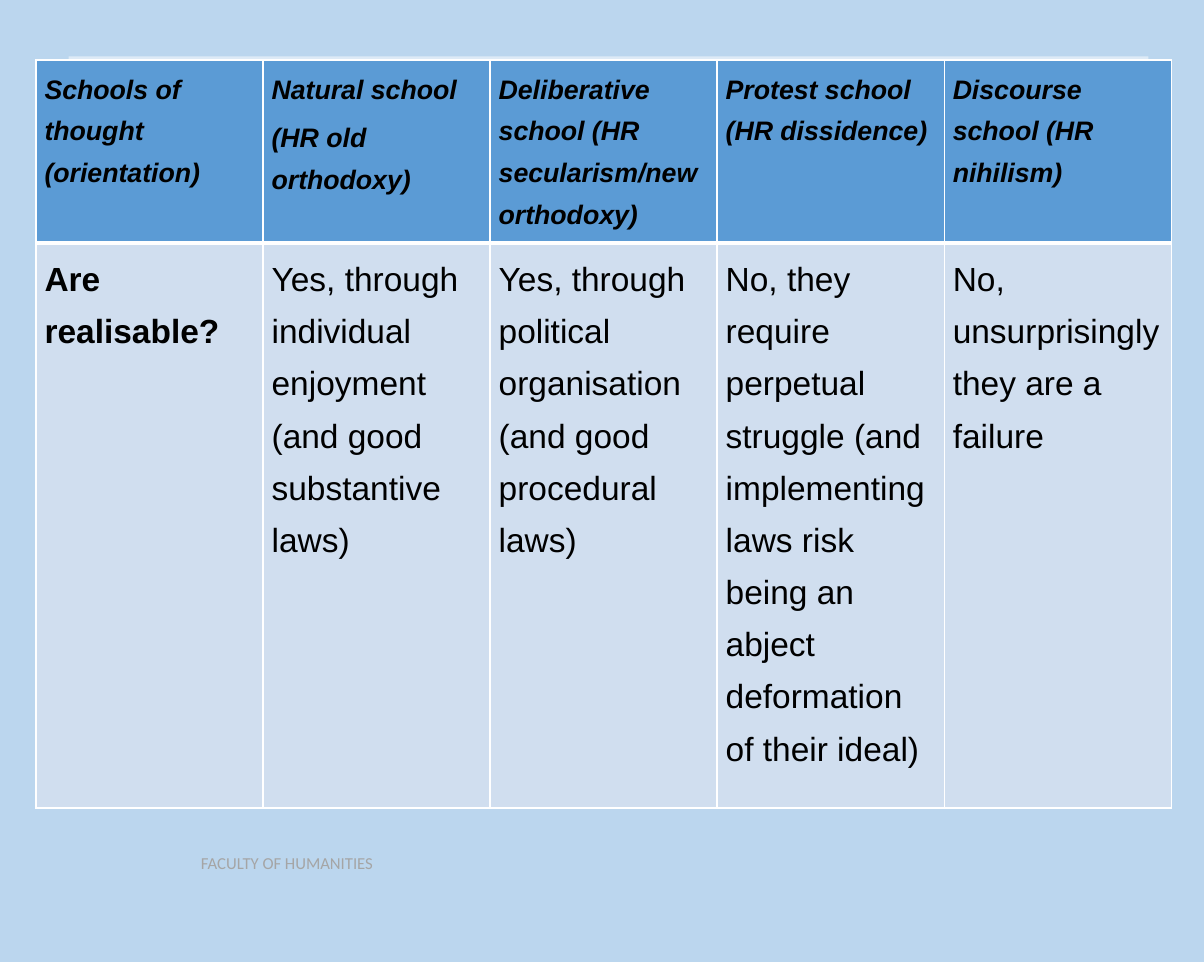
"""Build a slide comparing schools of thought on whether human rights are realisable."""
from pptx import Presentation
from pptx.dml.color import RGBColor
from pptx.enum import shapes, text
from pptx.oxml import parse_xml
from pptx.oxml.ns import nsdecls
from pptx.util import Cm, Pt

SKY = RGBColor(0xBB, 0xD6, 0xEE)
PALE = RGBColor(0xDD, 0xEA, 0xF6)
HEADER = RGBColor(0x5B, 0x9B, 0xD5)
BODY = RGBColor(0xD0, 0xDE, 0xEF)
BLACK = RGBColor(0, 0, 0)
GREY = RGBColor(0xA5, 0xA5, 0xA5)

COLUMNS = [
    (["Schools of thought (orientation)"], "Are realisable?"),
    (["Natural school", "(HR old orthodoxy)"],
     "Yes, through individual enjoyment (and good substantive laws)"),
    (["Deliberative school (HR secularism/new orthodoxy)"],
     "Yes, through political organisation (and good procedural laws)"),
    (["Protest school (HR dissidence)"],
     "No, they require perpetual struggle (and implementing laws risk "
     "being an abject deformation of their ideal)"),
    (["Discourse school (HR nihilism)"], "No, unsurprisingly they are a failure"),
]


def set_borders(cell, **widths):
    tcPr = cell._tc.get_or_add_tcPr()
    for i, side in enumerate("LRTB"):
        tcPr.insert(i, parse_xml(
            f'<a:ln{side} {nsdecls("a")} w="{Pt(widths.get(side, 1))}"><a:solidFill>'
            f'<a:srgbClr val="FFFFFF"/></a:solidFill></a:ln{side}>'))


def fill_cell(cell, paragraphs, size, bold, italic, color):
    cell.fill.solid()
    cell.fill.fore_color.rgb = color
    cell.margin_left = cell.margin_right = Cm(0.18)
    cell.margin_top, cell.margin_bottom = Cm(0.07), 0
    tf = cell.text_frame
    for i, line in enumerate(paragraphs):
        p = tf.add_paragraph() if i else tf.paragraphs[0]
        p.line_spacing = 1.4
        p.space_before = Pt(2 if i else 0)
        p.space_after = Pt(2)
        r = p.add_run()
        r.text = line
        r.font.name, r.font.size = "Arial", Pt(size)
        r.font.bold, r.font.italic = bold, italic
        r.font.color.rgb = BLACK


prs = Presentation()
prs.slide_width, prs.slide_height = Cm(25.4), Cm(20.3)
s = prs.slides.add_slide(prs.slide_layouts[6])
s.background.fill.solid()
s.background.fill.fore_color.rgb = SKY

footer = s.shapes.add_textbox(Cm(3.99), Cm(17.88), Cm(10.77), Cm(0.69))
tf = footer.text_frame
tf.word_wrap = True
tf.auto_size = text.MSO_AUTO_SIZE.SHAPE_TO_FIT_TEXT
r = tf.paragraphs[0].add_run()
r.text = "FACULTY OF HUMANITIES"
r.font.name, r.font.size = "Calibri", Pt(10)
r.font.color.rgb = GREY

panel = s.shapes.add_shape(shapes.MSO_SHAPE.RECTANGLE, Cm(1.45), Cm(1.19), Cm(22.78), Cm(15.39))
panel.shadow.inherit = False
panel.fill.solid()
panel.fill.fore_color.rgb = PALE
panel.line.fill.background()

table = s.shapes.add_table(2, len(COLUMNS), Cm(0.76), Cm(1.27), Cm(23.95), Cm(15.64)).table
table.rows[0].height, table.rows[1].height = Cm(3.78), Cm(11.86)
for i, (school, answer) in enumerate(COLUMNS):
    table.columns[i].width = Cm(4.79)
    top, bottom = table.cell(0, i), table.cell(1, i)
    fill_cell(top, school, 16, True, True, HEADER)
    fill_cell(bottom, [answer], 20, i == 0, False, BODY)
    set_borders(top, B=3)
    set_borders(bottom, T=3)

prs.save("out.pptx")
